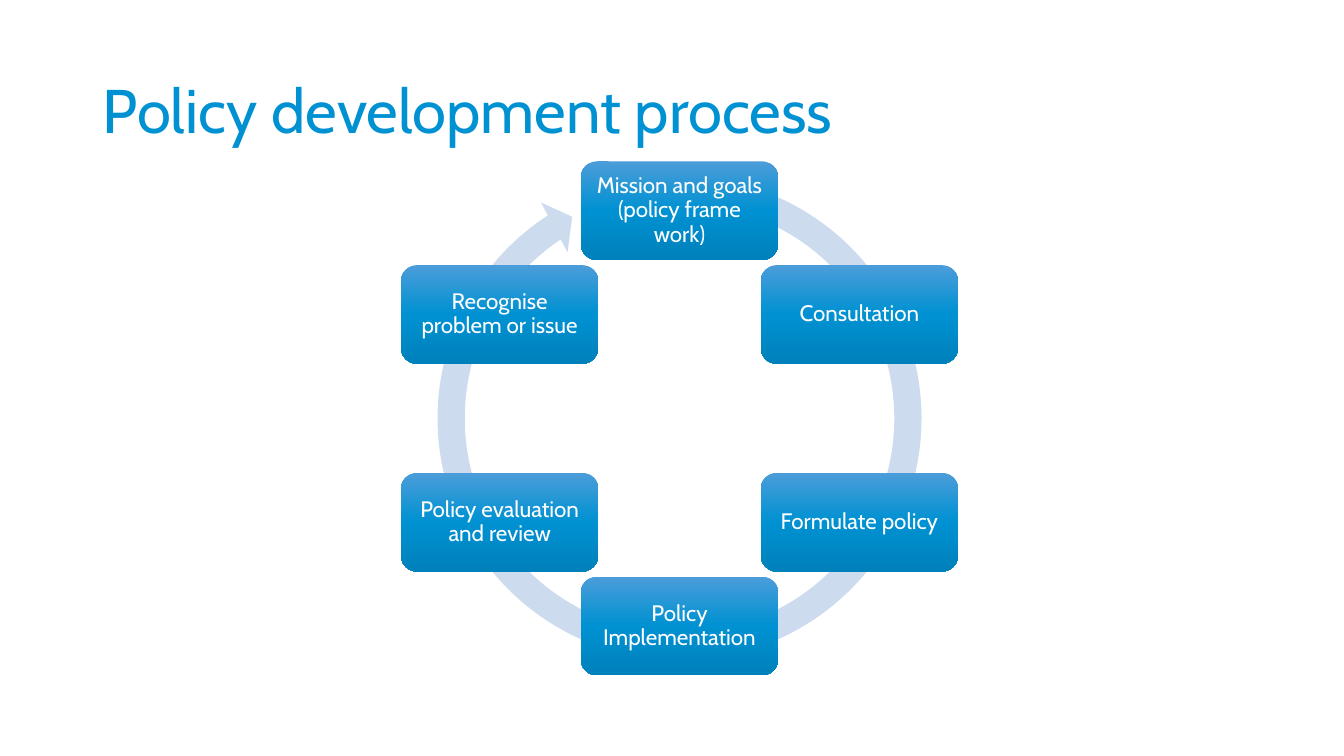
import copy
import math
from pptx import Presentation
from pptx import util as u
from pptx.dml.color import RGBColor
from pptx.enum import shapes, text
from pptx.oxml.ns import qn

THEME = {
    "font": "Cabin",
    "title_size": 44,
    "step_size": 16,
    "title": "0091D2",
    "step_text": "FFFFFF",
    "ring": "CCDCEE",
    "step_gradient": [(0, "4B9DD9"), (0.5, "0091D2"), (1, "0081BB")],
}

presentation = Presentation()
presentation.slide_width = u.Inches(13.33)
presentation.slide_height = u.Inches(7.5)
slide = presentation.slides.add_slide(presentation.slide_layouts[6])


def write(shape, wording, *, size, color, align, inset_x, inset_y):
    frame = shape.text_frame
    frame.word_wrap = True
    frame.vertical_anchor = text.MSO_ANCHOR.MIDDLE
    frame.margin_left = frame.margin_right = u.Inches(inset_x)
    frame.margin_top = frame.margin_bottom = u.Inches(inset_y)
    paragraph = frame.paragraphs[0]
    paragraph.text = wording
    paragraph.alignment = align
    paragraph.line_spacing = 0.9
    paragraph.font.name = THEME["font"]
    paragraph.font.size = u.Pt(size)
    paragraph.font.color.rgb = RGBColor.from_string(color)


def fill_gradient(shape, stops):
    shape.fill.gradient()
    shape.fill.gradient_angle = 270
    stop_list = shape._element.spPr.find(qn("a:gradFill")).find(qn("a:gsLst"))
    while len(stop_list) < len(stops):
        stop_list.append(copy.deepcopy(stop_list[0]))
    for stop, (position, color) in zip(shape.fill.gradient_stops, stops):
        stop.position = position
        stop.color.rgb = RGBColor.from_string(color)


# Title
title = slide.shapes.add_textbox(
    u.Inches(0.92), u.Inches(0.4), u.Inches(11.5), u.Inches(1.45))
write(title, "Policy development process", size=THEME["title_size"],
      color=THEME["title"], align=text.PP_ALIGN.LEFT, inset_x=0.1, inset_y=0.05)

# Ring with an arrowhead, centred on the cycle
center_x, center_y = 6.74, 4.15
ring_size = 5.09
ring = slide.shapes.add_shape(
    shapes.MSO_SHAPE.CIRCULAR_ARROW,
    u.Inches(center_x - ring_size / 2), u.Inches(center_y - ring_size / 2),
    u.Inches(ring_size), u.Inches(ring_size))
for index, value in enumerate([0.053, 3.126, 142.044, 171.409, 0.055]):
    ring.adjustments[index] = value
ring.shadow.inherit = False
ring.fill.solid()
ring.fill.fore_color.rgb = RGBColor.from_string(THEME["ring"])
ring.line.fill.background()

# Steps, clockwise from the top at equal angles
steps = [
    "Mission and goals (policy frame work)",
    "Consultation",
    "Formulate policy",
    "Policy Implementation",
    "Policy evaluation and review",
    "Recognise problem or issue",
]
step_width, step_height, radius = 1.96, 0.98, 2.06
for index, wording in enumerate(steps):
    angle = math.tau * index / len(steps)
    step = slide.shapes.add_shape(
        shapes.MSO_SHAPE.ROUNDED_RECTANGLE,
        u.Inches(center_x + radius * math.sin(angle) - step_width / 2),
        u.Inches(center_y - radius * math.cos(angle) - step_height / 2),
        u.Inches(step_width), u.Inches(step_height))
    step.shadow.inherit = False
    step.line.fill.background()
    fill_gradient(step, THEME["step_gradient"])
    write(step, wording, size=THEME["step_size"], color=THEME["step_text"],
          align=text.PP_ALIGN.CENTER, inset_x=0.07, inset_y=0.07)

presentation.save("out.pptx")
